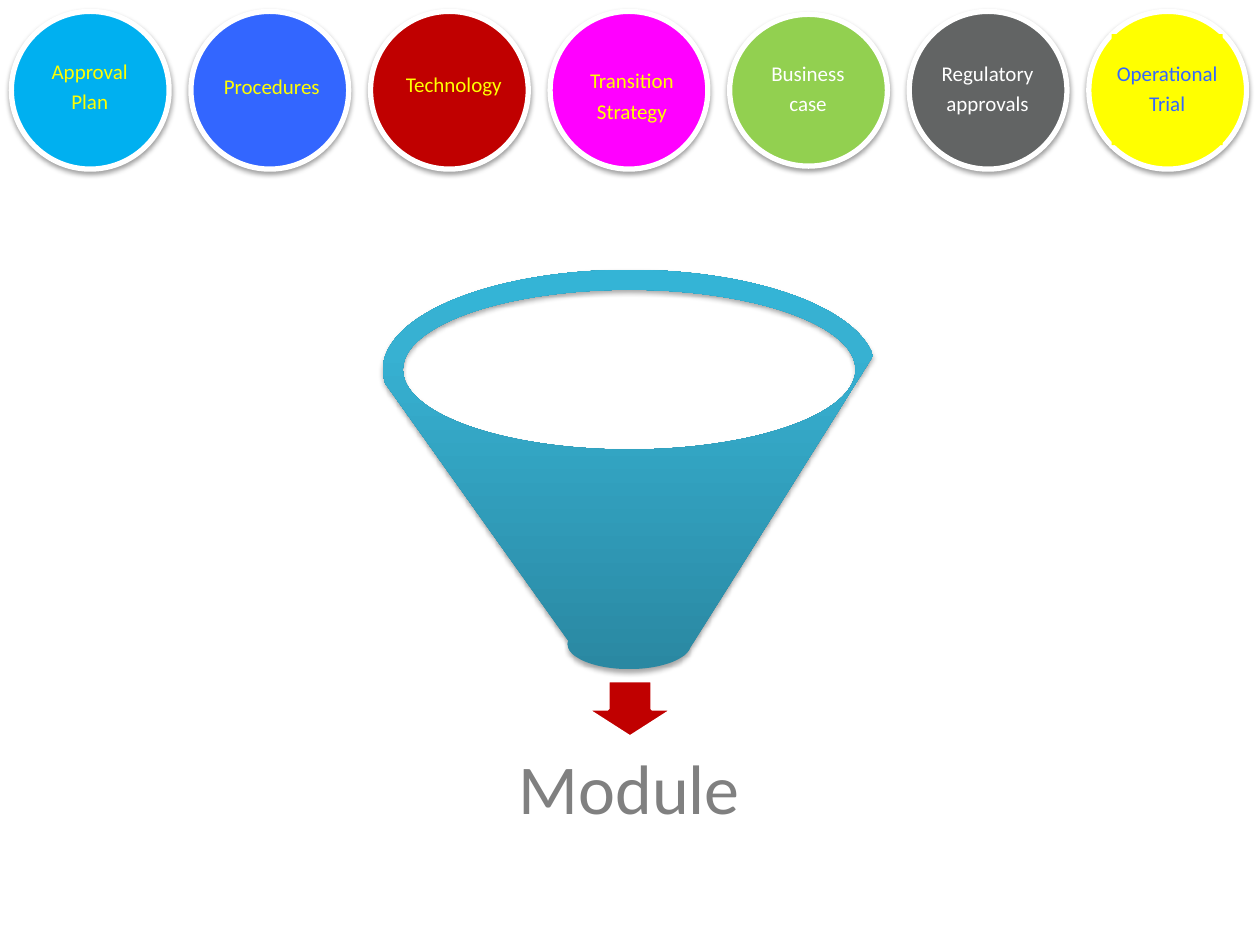
from copy import deepcopy

from lxml import etree
from pptx import Presentation
from pptx import util as u
from pptx.dml.color import RGBColor
from pptx.enum import shapes, text
from pptx.oxml import ns

WHITE = RGBColor(0xFF, 0xFF, 0xFF)
YELLOW = RGBColor(0xFF, 0xFF, 0x00)
RED = RGBColor(0xC0, 0x00, 0x00)
BLUE = RGBColor(0x33, 0x66, 0xFF)
CYAN = RGBColor(0x00, 0xB0, 0xF0)
MAGENTA = RGBColor(0xFF, 0x00, 0xFF)
GREEN = RGBColor(0x92, 0xD0, 0x50)
DARK_GREY = RGBColor(0x62, 0x64, 0x64)
MID_GREY = RGBColor(0x80, 0x80, 0x80)
FUNNEL_STOPS = [
    (0, RGBColor(0x2A, 0x88, 0xA2)),
    (0.8, RGBColor(0x37, 0xB1, 0xD2)),
    (1, RGBColor(0x34, 0xB4, 0xD6)),
]


def write(words, *, left, top, width, height, size, color, inset):
    box = slide.shapes.add_textbox(u.Cm(left), u.Cm(top), u.Cm(width), u.Cm(height))
    frame = box.text_frame
    frame.word_wrap = True
    frame.vertical_anchor = text.MSO_ANCHOR.MIDDLE
    frame.margin_left = frame.margin_right = u.Cm(inset)
    frame.margin_top = frame.margin_bottom = u.Cm(inset)
    frame.text = words
    for paragraph in frame.paragraphs:
        paragraph.alignment = text.PP_ALIGN.CENTER
        paragraph.line_spacing = 0.9
        paragraph.space_after = u.Pt(0.35 * size)
        paragraph.font.name = "Calibri"
        paragraph.font.size = u.Pt(size)
        paragraph.font.color.rgb = color
    return box


def cast_shadow(shape, distance, opacity):
    shape.shadow.inherit = False
    effects = shape.element.spPr.find(ns.qn("a:effectLst"))
    shadow = etree.SubElement(
        effects, ns.qn("a:outerShdw"), blurRad=str(u.Pt(3.1)),
        dist=str(u.Pt(distance)), dir="5400000", rotWithShape="0")
    black = etree.SubElement(shadow, ns.qn("a:srgbClr"), val="000000")
    etree.SubElement(black, ns.qn("a:alpha"), val=str(opacity * 1000))


deck = Presentation()
deck.slide_width, deck.slide_height = u.Cm(25.4), u.Cm(19.05)
slide = deck.slides.add_slide(deck.slide_layouts[6])

# Arrow out of the funnel, and what comes out
arrow = slide.shapes.add_shape(
    shapes.MSO_SHAPE.DOWN_ARROW, u.Cm(11.81), u.Cm(13.72), u.Cm(1.78), u.Cm(1.14))
arrow.shadow.inherit = False
arrow.fill.solid()
arrow.fill.fore_color.rgb = RED
arrow.line.color.rgb = WHITE
arrow.line.width = u.Pt(2)
write("Module", left=8.43, top=14.88, width=8.51, height=2.16,
      size=40, color=MID_GREY, inset=0.79)

# Funnel, dark at the foot and light at the rim
funnel = slide.shapes.add_shape(
    shapes.MSO_SHAPE.FUNNEL, u.Cm(7.72), u.Cm(5.44), u.Cm(9.93), u.Cm(8.05))
funnel.line.fill.background()
funnel.fill.gradient()
funnel.fill.gradient_angle = 90
stop_list = funnel.element.spPr.find(".//" + ns.qn("a:gsLst"))
stop_list.append(deepcopy(stop_list[0]))
for stop, (position, color) in zip(funnel.fill.gradient_stops, FUNNEL_STOPS):
    stop.position = position
    stop.color.rgb = color
cast_shadow(funnel, distance=1.8, opacity=35)

# Row of inputs: words, circle colour, text colour, label offset, label top
inputs = [
    ("Approval\nPlan", CYAN, YELLOW, 0.46, 0.64),
    ("Procedures", BLUE, YELLOW, 0.51, 0.64),
    ("Technology", RED, YELLOW, 0.56, 0.61),
    ("Transition\nStrategy", MAGENTA, YELLOW, 0.53, 0.84),
    ("Business\ncase", GREEN, WHITE, 0.46, 0.69),
    ("Regulatory\napprovals", DARK_GREY, WHITE, 0.46, 0.69),
    ("Operational\nTrial", YELLOW, BLUE, 0.46, 0.69),
]
DIAMETER, PITCH, MARGIN = 3.18, 3.62, 0.23
for index, (words, fill, ink, offset, label_top) in enumerate(inputs):
    left = MARGIN + index * PITCH
    # The green circle is slightly flattened
    squash = 0.06 if fill == GREEN else 0
    circle = slide.shapes.add_shape(
        shapes.MSO_SHAPE.OVAL, u.Cm(left), u.Cm(MARGIN + squash),
        u.Cm(DIAMETER), u.Cm(DIAMETER - 2 * squash))
    circle.fill.solid()
    circle.fill.fore_color.rgb = fill
    circle.line.color.rgb = WHITE
    circle.line.width = u.Pt(3)
    cast_shadow(circle, distance=1.6, opacity=38)
    label = write(words, left=left + offset, top=label_top, width=2.24, height=2.24,
                  size=12, color=ink, inset=0.05)
    if fill == YELLOW:
        label.fill.solid()
        label.fill.fore_color.rgb = YELLOW

deck.save("out.pptx")
